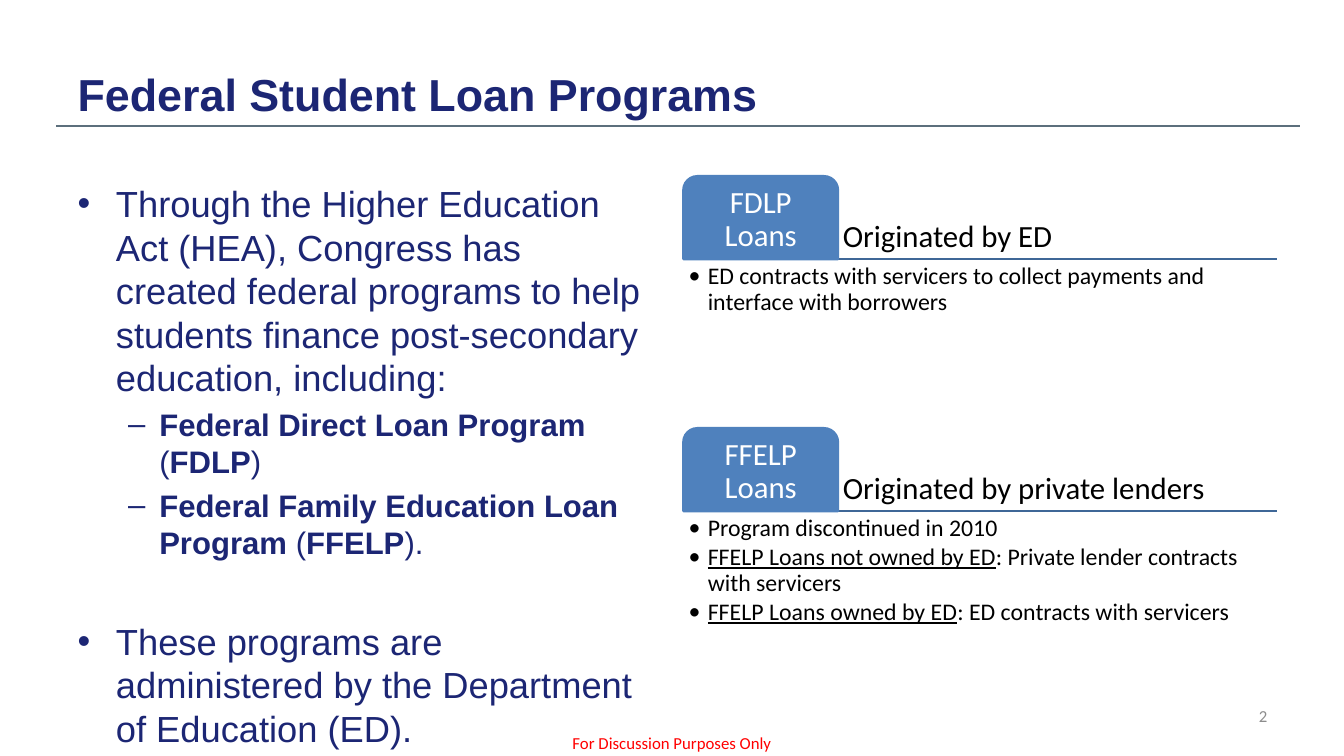
from dataclasses import dataclass, field

from lxml import etree
from pptx import Presentation
from pptx import util as u
from pptx.dml.color import RGBColor
from pptx.enum import shapes, text
from pptx.oxml import ns

NAVY, BLUE, RULE_BLUE, SLATE = "1C2674", "4F81BD", "3F6797", "5C6F7C"
BLACK, WHITE, GRAY, RED = "000000", "FFFFFF", "8C8C8C", "FF0000"


@dataclass
class Run:
    text: str
    format: dict = field(default_factory=dict)


@dataclass
class Item:
    runs: list[Run]
    size: float
    color: str
    font: str = "Calibri"
    bullet: str = ""
    margin: float = 0
    hanging: float = 0
    level: int = 0
    layout: dict = field(default_factory=dict)


@dataclass
class Program:
    name: str
    origin: str
    top: float
    details: list[list[Run]]


def rgb(color: str) -> RGBColor:
    return RGBColor.from_string(color)


def bold(words: str) -> Run:
    return Run(words, {"bold": True})


def underlined(words: str) -> Run:
    return Run(words, {"underline": True})


def place(shape, left: float, top: float, width: float, height: float) -> None:
    box = {"left": left, "top": top, "width": width, "height": height}
    for name, value in box.items():
        setattr(shape, name, u.Inches(value))


def write(frame, items: list[Item], anchor=text.MSO_ANCHOR.TOP, inset: float = 0.1) -> None:
    settings = {
        "word_wrap": True, "auto_size": text.MSO_AUTO_SIZE.NONE, "vertical_anchor": anchor,
        "margin_left": u.Inches(inset), "margin_right": u.Inches(inset),
        "margin_top": u.Inches(0.05), "margin_bottom": u.Inches(0.05),
    }
    for name, value in settings.items():
        setattr(frame, name, value)
    for index, item in enumerate(items):
        paragraph = frame.add_paragraph() if index else frame.paragraphs[0]
        paragraph.level = item.level
        if item.bullet:
            properties = paragraph._p.get_or_add_pPr()
            properties.set("marL", str(u.Inches(item.margin)))
            properties.set("indent", str(-u.Inches(item.hanging)))
            etree.SubElement(properties, ns.qn("a:buFont")).set("typeface", item.font)
            etree.SubElement(properties, ns.qn("a:buChar")).set("char", item.bullet)
        for name, value in item.layout.items():
            setattr(paragraph, name, value)
        for part in item.runs:
            run = paragraph.add_run()
            run.text = part.text
            base = {"name": item.font, "size": u.Pt(item.size), "bold": False}
            for name, value in (base | part.format).items():
                setattr(run.font, name, value)
            run.font.color.rgb = rgb(item.color)


def add_text(slide, box: tuple, items: list[Item], **options) -> None:
    shape = slide.shapes.add_textbox(0, 0, 0, 0)
    place(shape, *box)
    write(shape.text_frame, items, **options)


def add_rule(slide, left: float, right: float, y: float, color: str, width: float) -> None:
    rule = slide.shapes.add_connector(
        shapes.MSO_CONNECTOR.STRAIGHT, u.Inches(left), u.Inches(y), u.Inches(right), u.Inches(y))
    rule.line.color.rgb = rgb(color)
    rule.line.width = u.Pt(width)
    etree.SubElement(rule._element.spPr, ns.qn("a:effectLst"))


def add_program(slide, program: Program) -> None:
    left, width, tab_width, tab_height, detail_height = 6.78, 5.89, 1.53, 0.82, 1.64
    bottom = program.top + tab_height
    add_rule(slide, left, left + width, bottom, RULE_BLUE, 2)
    add_text(slide, (left + tab_width, program.top, width - tab_width, tab_height),
             [Item([Run(program.origin)], 22, BLACK, layout={"line_spacing": 0.9})],
             anchor=text.MSO_ANCHOR.BOTTOM, inset=0.05)
    tab = slide.shapes.add_shape(shapes.MSO_SHAPE.ROUND_2_SAME_RECTANGLE, 0, 0, 0, 0)
    place(tab, left, program.top, tab_width, tab_height)
    tab.shadow.inherit = False
    tab.fill.solid()
    tab.fill.fore_color.rgb = rgb(BLUE)
    tab.line.color.rgb = rgb(BLUE)
    tab.line.width = u.Pt(2)
    centred = {"line_spacing": 0.9, "alignment": text.PP_ALIGN.CENTER}
    write(tab.text_frame, [Item([Run(program.name)], 22, WHITE, layout=centred)],
          anchor=text.MSO_ANCHOR.MIDDLE, inset=0.05)
    spacing = {"line_spacing": 0.9, "space_after": u.Pt(2.55)}
    details = [Item(runs, 17, BLACK, bullet="•", margin=0.19, hanging=0.19, level=1,
                    layout=spacing) for runs in program.details]
    add_text(slide, (left, bottom, width, detail_height), details, inset=0.05)


def body_item(runs: list[Run], before: float, level: int = 0) -> Item:
    size, bullet, margin, hanging = [(25.9, "•", 0.38, 0.38), (22.2, "–", 0.81, 0.31)][level]
    layout = {"space_before": u.Pt(before), "line_spacing": 1.0}
    return Item(runs, size, NAVY, "Arial", bullet, margin, hanging, level, layout)


BODY = [
    body_item([Run("Through the Higher Education Act (HEA), Congress has created federal programs "
                   "to help students finance post-secondary education, including:")], 0),
    body_item([bold("Federal Direct Loan Program "), Run("("), bold("FDLP"), Run(")")], 4.4, 1),
    body_item([bold("Federal Family Education Loan Program"), Run(" ("), bold("FFELP"),
               Run(").")], 4.4, 1),
    body_item([Run("These programs are administered by the Department of Education (ED).")], 41.5),
]
PROGRAMS = [
    Program("FDLP Loans", "Originated by ED", 1.75, [
        [Run("ED contracts with servicers to collect payments and interface with borrowers")],
    ]),
    Program("FFELP Loans", "Originated by private lenders", 4.25, [
        [Run("Program discontinued in 2010")],
        [underlined("FFELP Loans not owned by ED"),
         Run(": Private lender contracts with servicers")],
        [underlined("FFELP Loans owned by ED"), Run(": ED contracts with servicers")],
    ]),
]


def main() -> None:
    presentation = Presentation()
    presentation.slide_width = u.Inches(13.33)
    presentation.slide_height = u.Inches(7.5)
    slide = presentation.slides.add_slide(presentation.slide_layouts[1])

    # Title and its rule
    add_rule(slide, 0.56, 12.89, 1.25, SLATE, 1.25)
    title, body = slide.shapes.title, slide.placeholders[1]
    place(title, 0.67, 0, 12, 1.25)
    left_aligned = {"alignment": text.PP_ALIGN.LEFT}
    write(title.text_frame, [Item([bold("Federal Student Loan Programs")], 32, NAVY, "Arial",
                                  layout=left_aligned)], anchor=text.MSO_ANCHOR.BOTTOM)

    # Bulleted list
    place(body, 0.67, 1.75, 5.89, 4.95)
    write(body.text_frame, BODY)

    # Loan programs
    for program in PROGRAMS:
        add_program(slide, program)

    # Page number and footer
    add_text(slide, (9.56, 6.95, 3.11, 0.4),
             [Item([Run("2")], 12, GRAY, layout={"alignment": text.PP_ALIGN.RIGHT})])
    add_text(slide, (4.06, 7.22, 5.21, 0.33),
             [Item([Run("For Discussion Purposes Only")], 12, RED,
                   layout={"alignment": text.PP_ALIGN.CENTER})])

    presentation.save("out.pptx")


if __name__ == "__main__":
    main()
